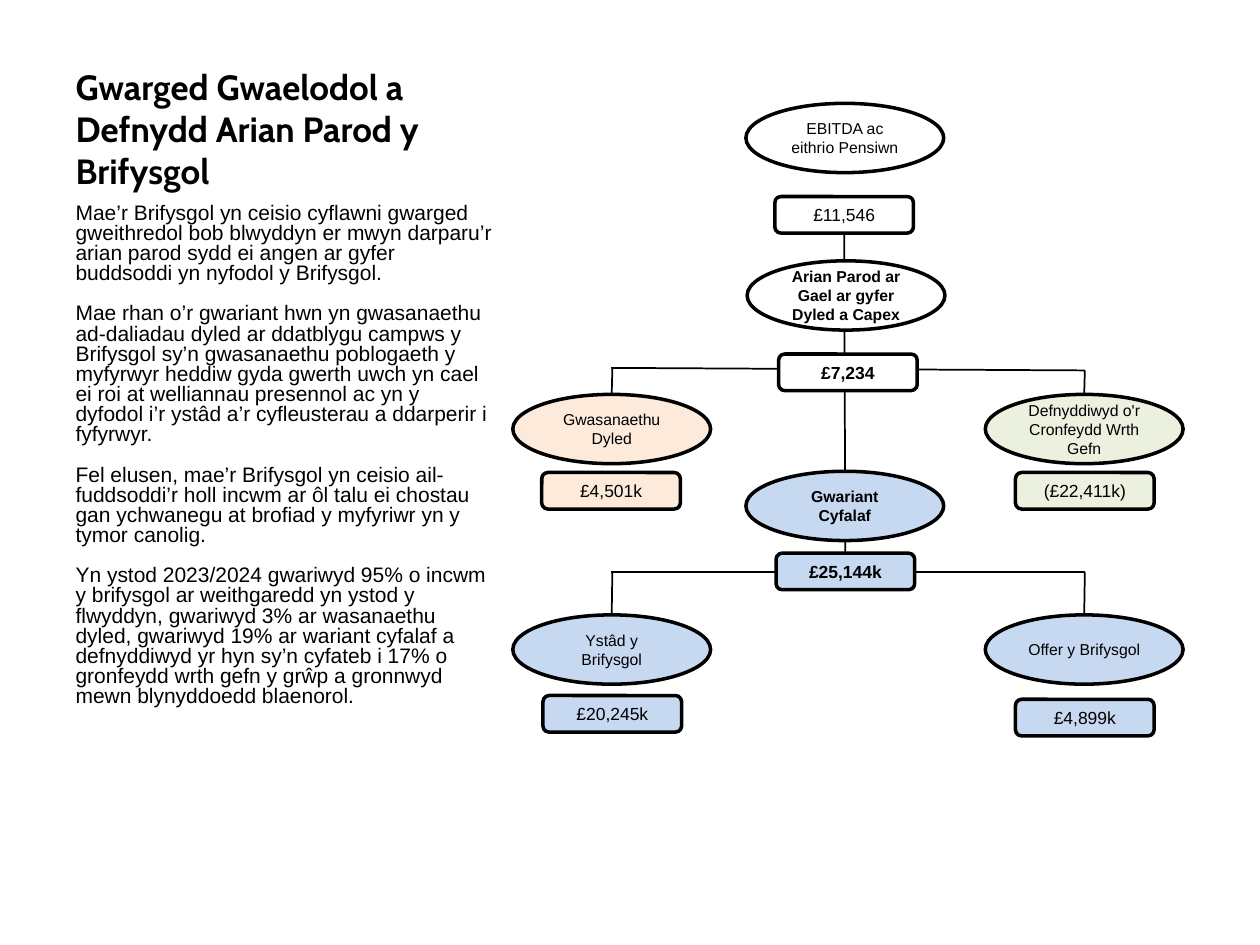
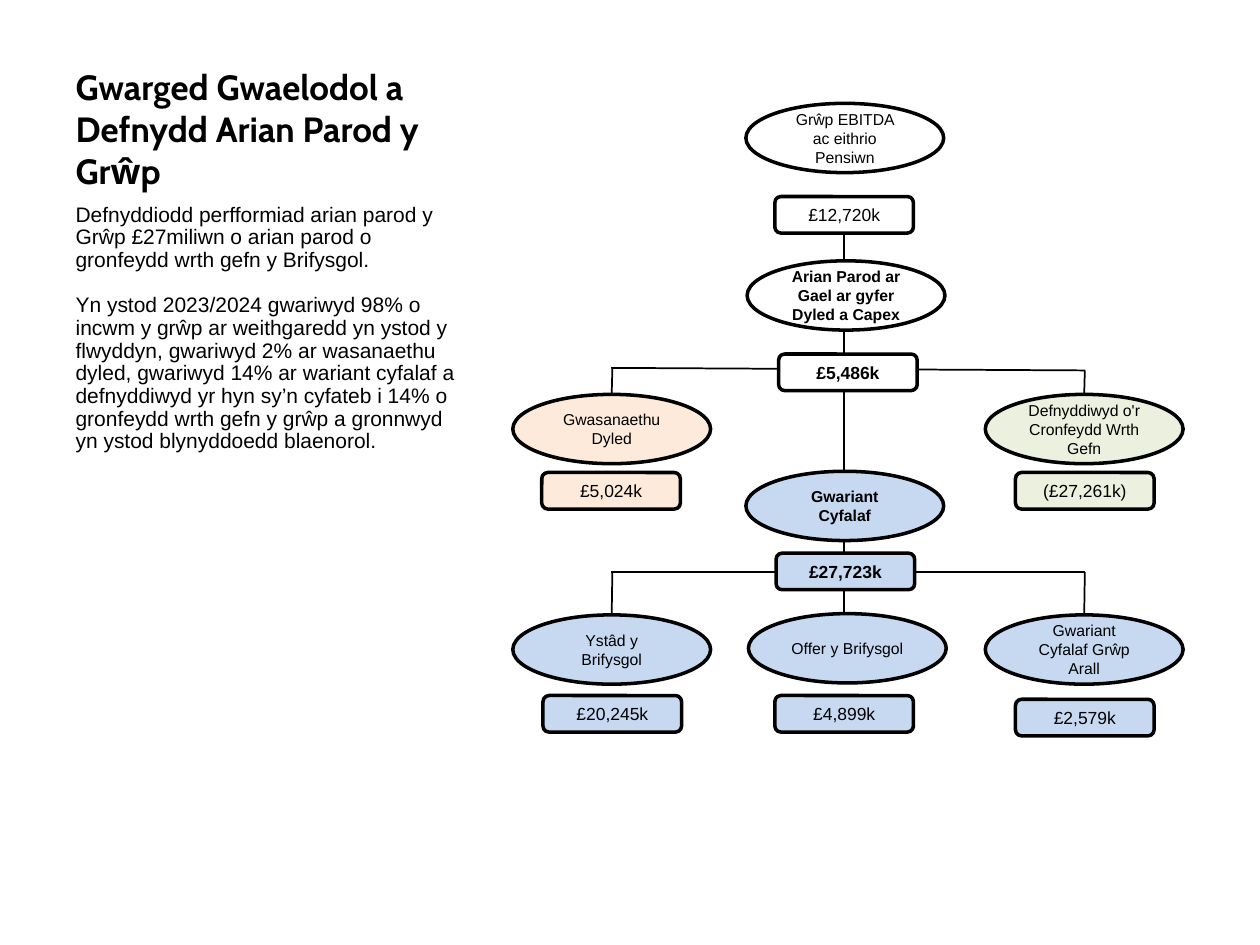
from dataclasses import dataclass

from lxml import etree
from pptx import Presentation
from pptx import util as u
from pptx.dml.color import RGBColor
from pptx.enum import shapes, text
from pptx.oxml.ns import qn

PX = u.Inches(1) // 100  # 100 px to the inch


@dataclass(frozen=True)
class Theme:
    ink: str = "000000"
    plain: str = "FFFFFF"
    debt: str = "FDEADA"
    reserves: str = "EBF1DE"
    capital: str = "C6D9F1"
    title_font: str = "Cabin"
    body_font: str = "Arial"
    title_size: int = 20
    body_size: int = 12
    label_size: int = 9
    figure_size: int = 10
    outline: int = 2
    connector: int = 1


THEME = Theme()
LABEL_SIZE = (157, 55)
FIGURE_SIZE = (110, 29)

# Each stage: label corner, figure corner, fill, bold
STAGES = {
    "ebitda": ((592, 82), (615, 156), THEME.plain, False),
    "available": ((593, 207), (618, 281), THEME.plain, True),
    "debt": ((407, 313), (430, 375), THEME.debt, False),
    "reserves": ((782, 313), (806, 375), THEME.reserves, False),
    "capital": ((592, 374), (616, 439), THEME.capital, True),
    "left": ((407, 488), (431, 552), THEME.capital, False),
    "middle": ((594, 487), (615, 552), THEME.capital, False),
    "right": ((782, 488), (806, 555), THEME.capital, False),
}
# Height of the crossbar above each stage that hangs from one
DROPS = {"debt": 293, "reserves": 294, "left": 454, "right": 454}

SHARED_LABELS = {
    "available": "Arian Parod ar Gael ar gyfer Dyled a Capex",
    "debt": "Gwasanaethu Dyled",
    "reserves": "Defnyddiwyd o'r Cronfeydd Wrth Gefn",
    "capital": "Gwariant Cyfalaf",
    "left": "Ystâd y Brifysgol",
}

UNIVERSITY = {
    "title": "Gwarged Gwaelodol a Defnydd Arian Parod y Brifysgol",
    "body_box": (50, 157, 351, 454),
    "line_spacing": 0.8,
    "gap": 11.5,
    "body": [
        "Mae’r Brifysgol yn ceisio cyflawni gwarged gweithredol bob blwyddyn er mwyn "
        "darparu’r arian parod sydd ei angen ar gyfer buddsoddi yn nyfodol y Brifysgol.",
        "Mae rhan o’r gwariant hwn yn gwasanaethu ad-daliadau dyled ar ddatblygu campws y "
        "Brifysgol sy’n gwasanaethu poblogaeth y myfyrwyr heddiw gyda gwerth uwch yn cael "
        "ei roi at welliannau presennol ac yn y dyfodol i’r ystâd a’r cyfleusterau a "
        "ddarperir i fyfyrwyr.",
        "Fel elusen, mae’r Brifysgol yn ceisio ail-fuddsoddi’r holl incwm ar ôl talu ei "
        "chostau gan ychwanegu at brofiad y myfyriwr yn y tymor canolig.",
        "Yn ystod 2023/2024 gwariwyd 95% o incwm y brifysgol ar weithgaredd yn ystod y "
        "flwyddyn, gwariwyd 3% ar wasanaethu dyled, gwariwyd 19% ar wariant cyfalaf a "
        "defnyddiwyd yr hyn sy’n cyfateb i 17% o gronfeydd wrth gefn y grŵp a gronnwyd "
        "mewn blynyddoedd blaenorol.",
    ],
    "labels": {"ebitda": "EBITDA ac eithrio Pensiwn", "right": "Offer y Brifysgol"},
    "figures": {
        "ebitda": "£11,546", "available": "£7,234", "debt": "£4,501k",
        "reserves": "(£22,411k)", "capital": "£25,144k", "left": "£20,245k",
        "right": "£4,899k",
    },
}

GROUP = {
    "title": "Gwarged Gwaelodol a Defnydd Arian Parod y Grŵp",
    "body_box": (50, 157, 329, 441),
    "line_spacing": 0.9,
    "gap": 12.9,
    "body": [
        "Defnyddiodd perfformiad arian parod y Grŵp £27miliwn o arian parod o gronfeydd "
        "wrth gefn y Brifysgol.",
        "Yn ystod 2023/2024 gwariwyd 98% o incwm y grŵp ar weithgaredd yn ystod y "
        "flwyddyn, gwariwyd 2% ar wasanaethu dyled, gwariwyd 14% ar wariant cyfalaf a "
        "defnyddiwyd yr hyn sy’n cyfateb i 14% o gronfeydd wrth gefn y grŵp a gronnwyd yn "
        "ystod blynyddoedd blaenorol.",
    ],
    "labels": {
        "ebitda": "Grŵp EBITDA ac eithrio Pensiwn",
        "middle": "Offer y Brifysgol",
        "right": "Gwariant Cyfalaf Grŵp Arall",
    },
    "figures": {
        "ebitda": "£12,720k", "available": "£5,486k", "debt": "£5,024k",
        "reserves": "(£27,261k)", "capital": "£27,723k", "left": "£20,245k",
        "middle": "£4,899k", "right": "£2,579k",
    },
}


def set_values(target, values):
    for name, value in values.items():
        setattr(target, name, value)


class Deck:
    def __init__(self, theme):
        self.theme = theme
        self.presentation = Presentation()
        set_values(self.presentation, {"slide_width": 1000 * PX, "slide_height": 750 * PX})
        self.slide = None

    def add_slide(self):
        self.slide = self.presentation.slides.add_slide(self.presentation.slide_layouts[1])

    def add_words(self, paragraph, words, size, font=None, bold=False, **layout):
        set_values(paragraph, layout)
        run = paragraph.add_run()
        run.text = words
        set_values(run.font, {
            "name": font or self.theme.body_font, "size": u.Pt(size), "bold": bold})
        run.font.color.rgb = RGBColor.from_string(self.theme.ink)

    def prepare(self, placeholder, box, anchor):
        names = ("left", "top", "width", "height")
        set_values(placeholder, {name: value * PX for name, value in zip(names, box)})
        set_values(placeholder.text_frame, {
            "word_wrap": True, "auto_size": text.MSO_AUTO_SIZE.NONE, "vertical_anchor": anchor})
        return placeholder.text_frame

    def title(self, words):
        frame = self.prepare(self.slide.shapes.title, (50, 30, 329, 127), text.MSO_ANCHOR.BOTTOM)
        self.add_words(frame.paragraphs[0], words, self.theme.title_size, self.theme.title_font,
                       True, alignment=text.PP_ALIGN.LEFT)

    def body(self, paragraphs, box, line_spacing, gap):
        frame = self.prepare(self.slide.placeholders[1], box, text.MSO_ANCHOR.TOP)
        for index, words in enumerate(paragraphs):
            paragraph = frame.add_paragraph() if index else frame.paragraphs[0]
            properties = paragraph._p.get_or_add_pPr()
            properties.set("marL", "0")
            properties.set("indent", "0")
            etree.SubElement(properties, qn("a:buNone"))
            self.add_words(paragraph, words, self.theme.body_size, line_spacing=line_spacing,
                           space_before=u.Pt(gap if index else 0), space_after=u.Pt(0),
                           alignment=text.PP_ALIGN.LEFT)

    def node(self, kind, corner, size, words, fill, font_size, bold):
        shape = self.slide.shapes.add_shape(kind, *(value * PX for value in corner + size))
        shape.shadow.inherit = False
        shape.fill.solid()
        shape.fill.fore_color.rgb = RGBColor.from_string(fill)
        shape.line.color.rgb = RGBColor.from_string(self.theme.ink)
        shape.line.width = u.Pt(self.theme.outline)
        set_values(shape.text_frame, {
            "word_wrap": True, "vertical_anchor": text.MSO_ANCHOR.MIDDLE})
        self.add_words(shape.text_frame.paragraphs[0], words, font_size, bold=bold,
                       alignment=text.PP_ALIGN.CENTER)
        return shape

    def line(self, start, end):
        connector = self.slide.shapes.add_connector(
            shapes.MSO_CONNECTOR.STRAIGHT, *(value * PX for value in start + end))
        connector.line.color.rgb = RGBColor.from_string(self.theme.ink)
        connector.line.width = u.Pt(self.theme.connector)
        etree.SubElement(connector._element.spPr, qn("a:effectLst"))
        return connector


def cash_flow_slide(deck, content):
    deck.add_slide()

    # Crossbars and trunk sit behind the stages
    deck.line((861, 454), (485, 454))
    deck.line((861, 294), (485, 292))
    trunk = deck.line((670, 185), (670, 487))

    # Title and commentary
    deck.title(content["title"])
    deck.body(content["body"], content["body_box"], content["line_spacing"], content["gap"])

    # Stages: a named ellipse with its figure below
    label_text = SHARED_LABELS | content["labels"]
    labels, figures = {}, {}
    for stage, (label_corner, figure_corner, fill, bold) in STAGES.items():
        if stage not in label_text:
            continue
        labels[stage] = deck.node(shapes.MSO_SHAPE.OVAL, label_corner, LABEL_SIZE,
                                  label_text[stage], fill, THEME.label_size, bold)
        figures[stage] = deck.node(shapes.MSO_SHAPE.ROUNDED_RECTANGLE, figure_corner, FIGURE_SIZE,
                                   content["figures"][stage], fill, THEME.figure_size, bold)

    # Trunk ends, then the drops from the crossbars
    trunk.begin_connect(figures["ebitda"], 2)
    if "middle" not in labels:
        trunk.end_connect(figures["capital"], 2)
    for stage, bar_top in DROPS.items():
        (left, top), *_ = STAGES[stage]
        centre = left + LABEL_SIZE[0] // 2 + 1
        drop = deck.line((centre, top), (centre, bar_top))
        drop.begin_connect(labels[stage], 0)


def main():
    deck = Deck(THEME)
    for content in (UNIVERSITY, GROUP):
        cash_flow_slide(deck, content)
    deck.presentation.save("out.pptx")


if __name__ == "__main__":
    main()
